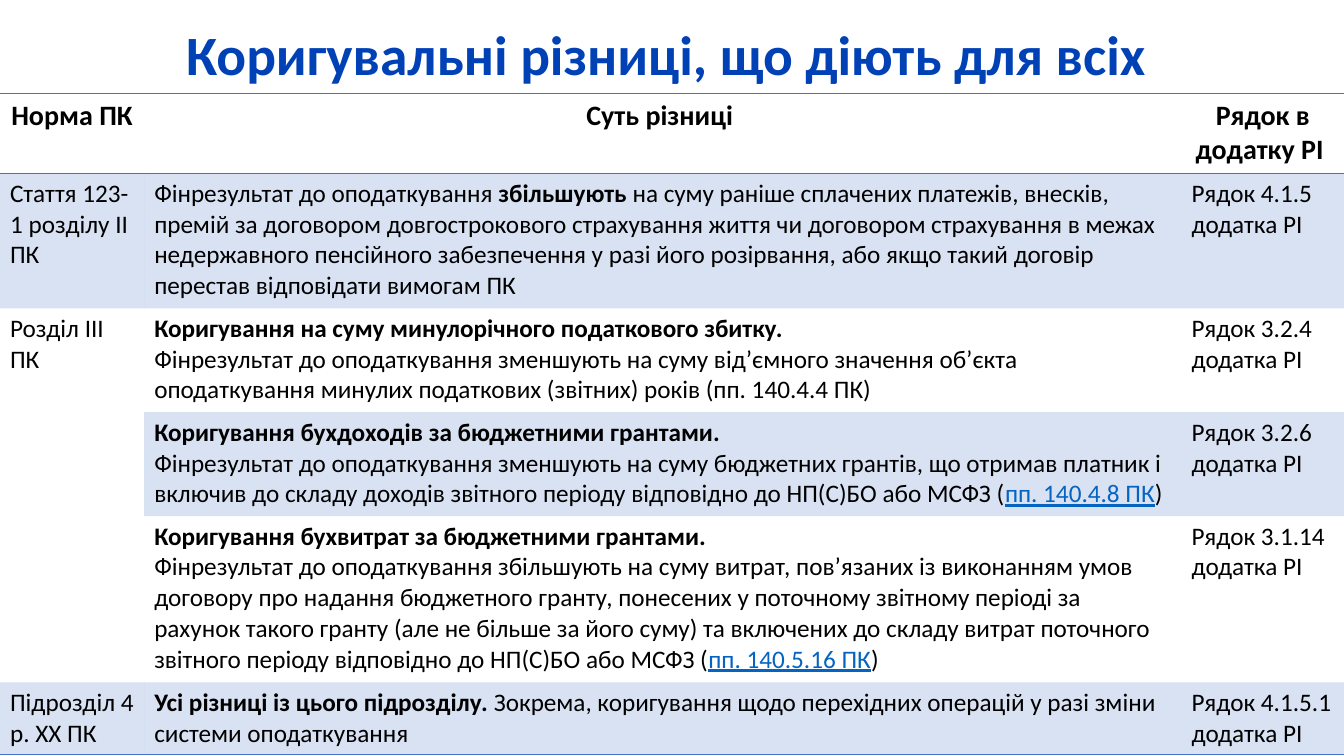
from lxml import etree
from pptx import Presentation
from pptx.dml.color import RGBColor
from pptx.enum.text import MSO_ANCHOR, PP_ALIGN
from pptx.oxml.ns import qn
from pptx.util import Inches, Pt

CENTER, LEFT, MIDDLE = PP_ALIGN.CENTER, PP_ALIGN.LEFT, MSO_ANCHOR.MIDDLE
COLORS = {"title": "0041B6", "text": "000000", "link": "0563C1", "accent": "4472C4"}
FONT = "Calibri"
PLAIN_STYLE = "{2D5ABB26-0587-4C30-8999-92F81FD0307C}"
WIDTH, HEIGHT = 13.33, 7.5

prs = Presentation()
prs.slide_width, prs.slide_height = Inches(WIDTH), Inches(HEIGHT)
slide = prs.slides.add_slide(prs.slide_layouts[6])


def style(run, size, color="text", bold=False):
    run.font.name, run.font.size, run.font.bold = FONT, Pt(size), bold
    run.font.color.rgb = RGBColor.from_string(COLORS[color])


def add_rule(cell, side):
    """Draw a 1 pt accent line on one side of a cell."""
    line = etree.Element(qn(f"a:{side}"), w=str(Pt(1)))
    fill = etree.SubElement(line, qn("a:solidFill"))
    etree.SubElement(fill, qn("a:srgbClr"), val=COLORS["accent"])
    cell._tc.get_or_add_tcPr().insert(0, line)


# Title
title = slide.shapes.add_textbox(Inches(0.92), Inches(0.4), Inches(11.5), Inches(0.35))
title.text_frame.word_wrap = True
title.text_frame.vertical_anchor = MIDDLE
heading = title.text_frame.paragraphs[0]
heading.text = "Коригувальні різниці, що діють для всіх "
heading.alignment, heading.line_spacing = CENTER, 0.9
style(heading.runs[0], 39.6, "title", True)

# Table content: a cell is a list of (kind, text) runs
HEADERS = ["Норма ПК", "Суть різниці ", "Рядок в додатку РІ "]
DIFFERENCES = [
    ("Стаття 123-1 розділу ІІ ПК", [
        ("text", "Фінрезультат до оподаткування "),
        ("bold", "збільшують "),
        ("text", "на суму раніше сплачених платежів, внесків, премій за договором "
                 "довгострокового страхування життя чи договором страхування в межах "
                 "недержавного пенсійного забезпечення у разі його розірвання, або якщо "
                 "такий договір перестав відповідати вимогам ПК")], "4.1.5"),
    ("Розділ ІІІ ПК", [
        ("bold", "Коригування на суму минулорічного податкового збитку."),
        ("break", ""),
        ("text", "Фінрезультат до оподаткування зменшують на суму від’ємного значення "
                 "об’єкта оподаткування минулих податкових (звітних) років "
                 "(пп. 140.4.4 ПК)")], "3.2.4"),
    (None, [
        ("bold", "Коригування бухдоходів за бюджетними грантами."),
        ("break", ""),
        ("text", "Фінрезультат до оподаткування зменшують на суму бюджетних грантів, що "
                 "отримав платник і включив до складу доходів звітного періоду "
                 "відповідно до НП(С)БО або МСФЗ ("),
        ("link", "пп. 140.4.8 ПК"), ("text", ")")], "3.2.6"),
    (None, [
        ("bold", "Коригування бухвитрат за бюджетними грантами."),
        ("break", ""),
        ("text", "Фінрезультат до оподаткування збільшують на суму витрат, пов’язаних із "
                 "виконанням умов договору про надання бюджетного гранту, понесених у "
                 "поточному звітному періоді за рахунок такого гранту (але не більше за "
                 "його суму) та включених до складу витрат поточного звітного періоду "
                 "відповідно до НП(С)БО або МСФЗ ("),
        ("link", "пп. 140.5.16 ПК"), ("text", ")")], "3.1.14"),
    ("Підрозділ 4 р. ХХ ПК", [
        ("bold", "Усі різниці із цього підрозділу. "),
        ("text", "Зокрема, коригування щодо перехідних операцій у разі зміни системи "
                 "оподаткування")], "4.1.5.1"),
]
rows = [[[("bold", header)] for header in HEADERS]]
for norm, essence, line_number in DIFFERENCES:
    rows.append([[("text", norm)] if norm else [], essence,
                 [("text", f"Рядок {line_number} додатка РІ")]])

# Table grid
COLUMN_WIDTHS = [1.43, 10.29, 1.61]
ROW_HEIGHTS = [0.79, 1.34, 1.03, 1.03, 1.65, 0.72]
top = 0.93
table_frame = slide.shapes.add_table(len(rows), len(HEADERS), 0, Inches(top),
                                     Inches(WIDTH), Inches(HEIGHT - top))
table = table_frame.table
table.first_row = table.horz_banding = False
table._tbl.tblPr.find(qn("a:tableStyleId")).text = PLAIN_STYLE
for column, width in zip(table.columns, COLUMN_WIDTHS):
    column.width = Inches(width)
for row, height in zip(table.rows, ROW_HEIGHTS):
    row.height = Inches(height)
table.cell(2, 0).merge(table.cell(4, 0))

# Cells: odd rows are tinted, except inside the merged norm cell
for r, row in enumerate(rows):
    for c, pieces in enumerate(row):
        cell = table.cell(r, c)
        paragraph = cell.text_frame.paragraphs[0]
        paragraph.alignment = CENTER if r == 0 else LEFT
        for kind, text in pieces:
            if kind == "break":
                paragraph.add_line_break()
                continue
            run = paragraph.add_run()
            run.text = text
            style(run, 20 if r == 0 else 18, "link" if kind == "link" else "text",
                  kind == "bold")
            run.font.underline = kind == "link"
        if r % 2 and pieces:
            cell.fill.solid()
            cell.fill.fore_color.rgb = RGBColor.from_string(COLORS["accent"])
            tint = cell._tc.tcPr.find(".//" + qn("a:srgbClr"))
            etree.SubElement(tint, qn("a:alpha"), val="20000")
        else:
            cell.fill.background()
        if r in (0, len(rows) - 1):
            add_rule(cell, "lnB")
        if r == 0:
            add_rule(cell, "lnT")

prs.save("out.pptx")
